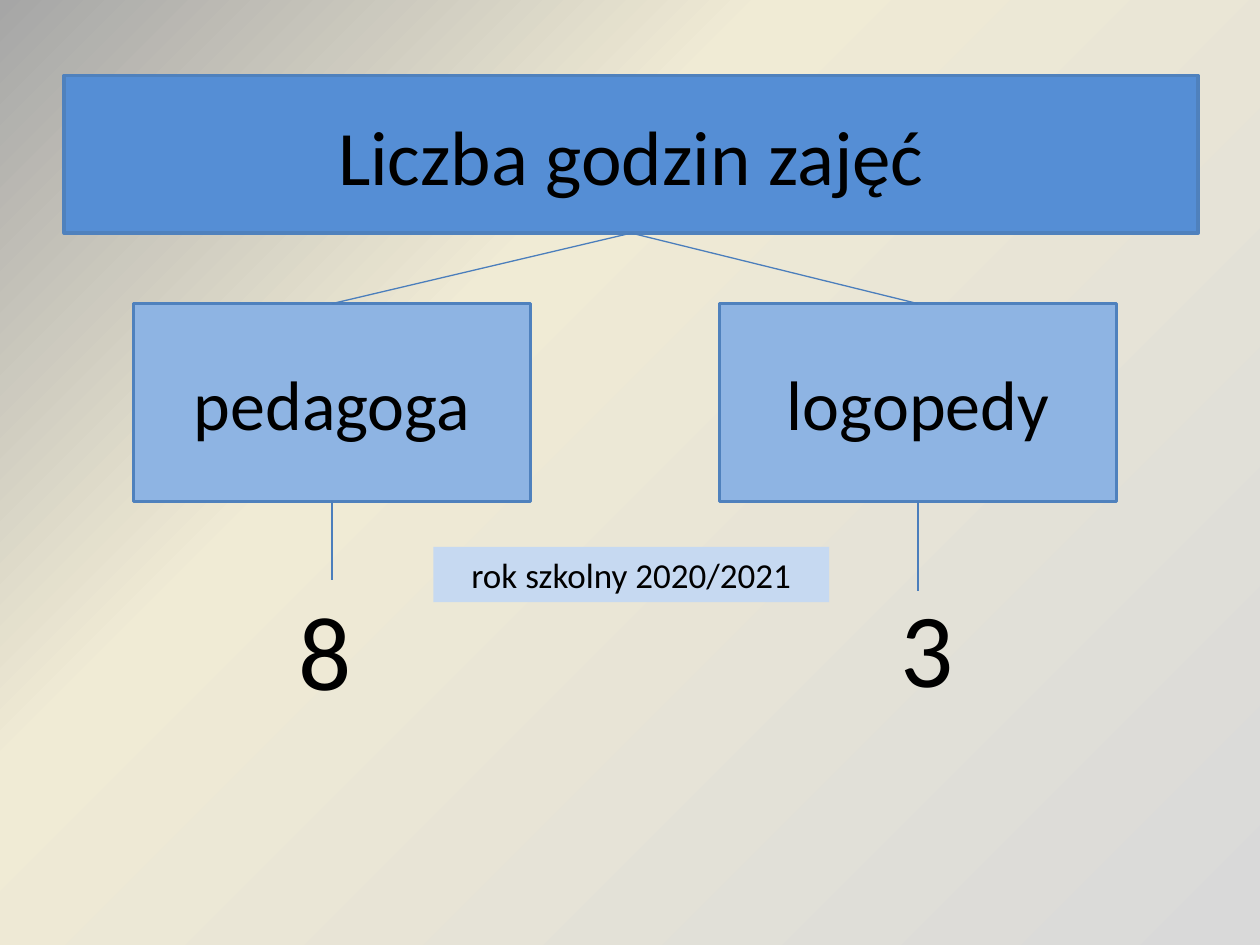
import pptx
import pptx.dml.color
import pptx.enum.shapes
import pptx.enum.text
import pptx.oxml
import pptx.oxml.ns
import pptx.util
from pptx.util import Inches

# Content
TITLE = ("Liczba godzin zajęć", (0.51, 0.6, 9, 1.25))
# name, box left, hours, (number left, number top), connector end
SPECIALISTS = [
    ("pedagoga", 1.06, "8", (2.27, 4.6), 4.6),
    ("logopedy", 5.71, "3", (7.05, 4.57), 4.69),
]
SCHOOL_YEAR = ("rok szkolny 2020/2021", (3.44, 4.34, 3.14, 0.44))
BACKGROUND_STOPS = [(0, "D9D9D9"), (65, "F0EBD5"), (100, "A6A6A6")]

BOX_TOP, BOX_WIDTH, BOX_HEIGHT = 2.41, 3.15, 1.57
BORDER, CONNECTOR = "4F81BD", "4B7EBC"
TOP, BOTTOM = 0, 2


def color(value):
    return pptx.dml.color.RGBColor.from_string(value)


def write(shape, text, size, grow=False):
    frame = shape.text_frame
    frame.word_wrap = True
    if grow:
        frame.auto_size = pptx.enum.text.MSO_AUTO_SIZE.SHAPE_TO_FIT_TEXT
    run = frame.paragraphs[0].add_run()
    run.text = text
    run.font.name = "Calibri"
    run.font.size = pptx.util.Pt(size)
    run.font.color.rgb = color("000000")


def add_box(slide, text, place, size, fill, border=None, grow=False):
    shape = slide.shapes.add_shape(
        pptx.enum.shapes.MSO_SHAPE.RECTANGLE, *map(Inches, place))
    shape.shadow.inherit = False
    shape.fill.solid()
    shape.fill.fore_color.rgb = color(fill)
    if border:
        shape.line.color.rgb = color(border)
        shape.line.width = pptx.util.Pt(2)
    else:
        shape.line.fill.background()
    write(shape, text, size, grow)
    shape.text_frame.vertical_anchor = pptx.enum.text.MSO_ANCHOR.MIDDLE
    shape.text_frame.paragraphs[0].alignment = pptx.enum.text.PP_ALIGN.CENTER
    return shape


def add_line(slide, start_box, end_x, end_y, end_box=None):
    line = slide.shapes.add_connector(
        pptx.enum.shapes.MSO_CONNECTOR.STRAIGHT, 0, 0, end_x, end_y)
    line.begin_connect(start_box, BOTTOM)
    if end_box is not None:
        line.end_connect(end_box, TOP)
    line.line.color.rgb = color(CONNECTOR)
    line.line.width = pptx.util.Pt(0.75)
    line._element.spPr.append(pptx.oxml.parse_xml(
        f"<a:effectLst {pptx.oxml.ns.nsdecls('a')}/>"))


def set_background(slide):
    stops = "".join(
        f'<a:gs pos="{position * 1000}"><a:srgbClr val="{value}"/></a:gs>'
        for position, value in BACKGROUND_STOPS)
    background = pptx.oxml.parse_xml(
        f"<p:bg {pptx.oxml.ns.nsdecls('p', 'a')}><p:bgPr>"
        f'<a:gradFill rotWithShape="1"><a:gsLst>{stops}</a:gsLst>'
        '<a:path path="circle"><a:fillToRect l="100000" t="100000"/></a:path>'
        "</a:gradFill><a:effectLst/></p:bgPr></p:bg>")
    slide._element.cSld.insert(0, background)


def main():
    presentation = pptx.Presentation()
    presentation.slide_width = Inches(10)
    presentation.slide_height = Inches(7.5)
    slide = presentation.slides.add_slide(presentation.slide_layouts[6])
    set_background(slide)

    # Title bar
    title = add_box(slide, *TITLE, 44, "558ED5", BORDER)

    # One branch per specialist: box, number of hours, two lines
    for name, left, hours, number_place, line_end in SPECIALISTS:
        box = add_box(slide, name, (left, BOX_TOP, BOX_WIDTH, BOX_HEIGHT),
                      40, "8EB4E3", BORDER)
        number = slide.shapes.add_textbox(
            *map(Inches, (*number_place, 0.55, 1.11)))
        write(number, hours, 60, grow=True)
        center = Inches(left + BOX_WIDTH / 2)
        add_line(slide, title, center, Inches(BOX_TOP), box)
        add_line(slide, box, center, Inches(line_end))

    # School year label
    add_box(slide, *SCHOOL_YEAR, 20, "C6D9F1", grow=True)

    presentation.save("out.pptx")


if __name__ == "__main__":
    main()
